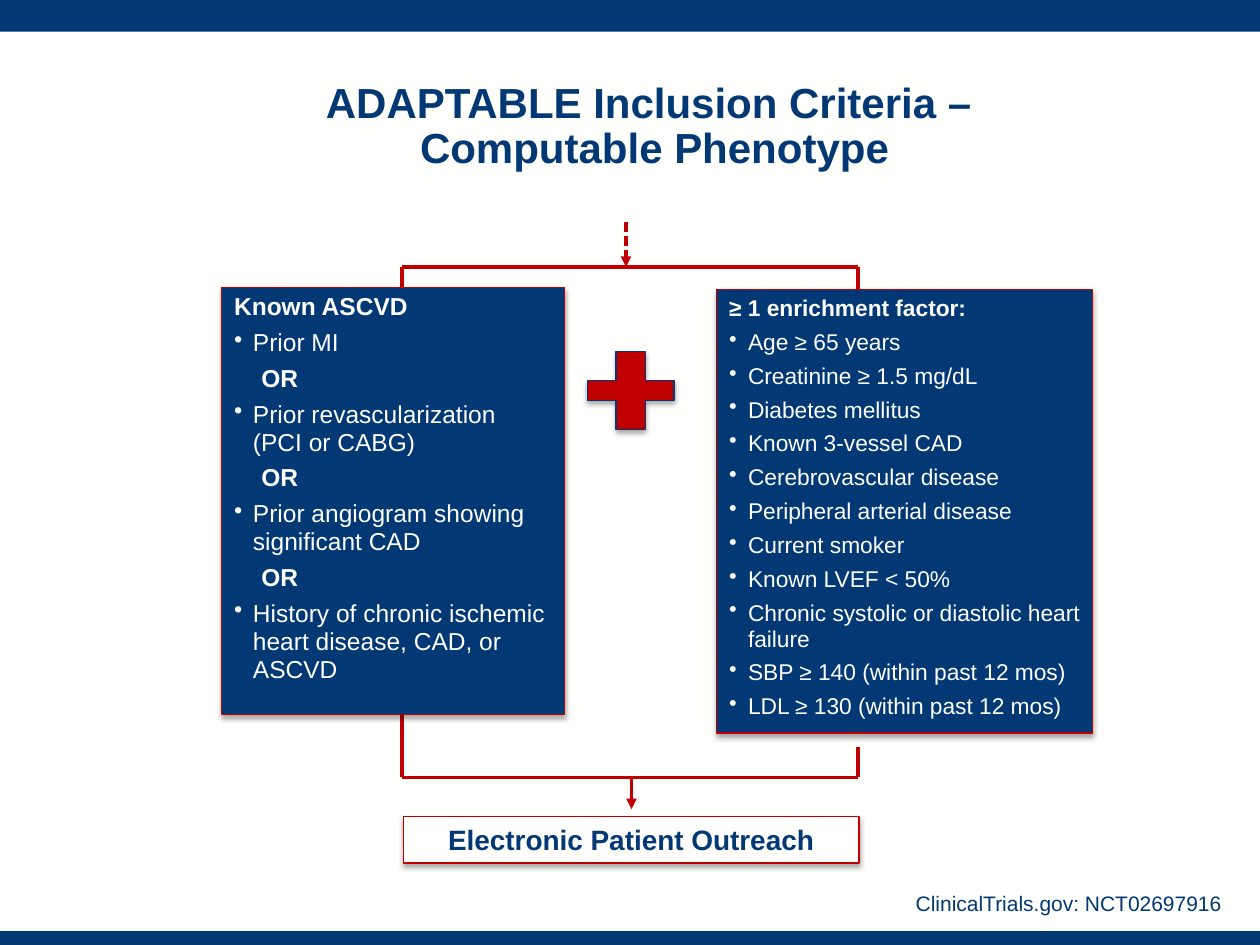
"""Build the ADAPTABLE inclusion criteria slide."""
from lxml import etree
from pptx import Presentation
from pptx import util as u
from pptx.dml.color import RGBColor
from pptx.enum import dml, shapes, text
from pptx.oxml.ns import qn

Cm, Pt = u.Cm, u.Pt
HUES = {"navy": "023873", "red": "C00000", "white": "FFFFFE", "black": "000000"}
RGB = {name: RGBColor.from_string(code) for name, code in HUES.items()}
KIND = shapes.MSO_SHAPE


def style(para, size, hue, bold=False):
    para.font.name, para.font.size = "Arial", Pt(size)
    para.font.bold, para.font.color.rgb = bold, RGB[hue]


def block(kind, left, top, width, height, fill, edge=None):
    shape = slide.shapes.add_shape(kind, Cm(left), Cm(top), Cm(width), Cm(height))
    shape.shadow.inherit = False
    shape.fill.solid()
    shape.fill.fore_color.rgb = RGB[fill]
    if edge is None:
        shape.line.fill.background()
        return shape
    shape.line.color.rgb, shape.line.width = RGB[edge], Pt(0.75)
    glow = etree.SubElement(shape._element.spPr.find(qn("a:effectLst")), qn("a:outerShdw"),
                            blurRad=str(Pt(3.1)), dist=str(Pt(1.8)), dir="5400000", rotWithShape="0")
    tint = etree.SubElement(glow, qn("a:srgbClr"), val=HUES["black"])
    etree.SubElement(tint, qn("a:alpha"), val="35000")
    return shape


deck = Presentation()
deck.slide_width, deck.slide_height = Cm(25.4), Cm(19.05)
slide = deck.slides.add_slide(deck.slide_layouts[5])
slide.background.fill.solid()
slide.background.fill.fore_color.rgb = RGB["white"]

for top, height in [(0, 0.64), (18.77, 0.32)]:
    block(KIND.RECTANGLE, 0, top, 25.4, height, "navy")

title = slide.shapes.title
title.left, title.top, title.width, title.height = Cm(5.23), Cm(2.11), Cm(15.93), Cm(1.37)
frame = title.text_frame
frame.margin_left = frame.margin_right = frame.margin_top = frame.margin_bottom = 0
frame.vertical_anchor = text.MSO_ANCHOR.BOTTOM
frame.auto_size, frame.word_wrap = text.MSO_AUTO_SIZE.NONE, True
head = frame.paragraphs[0]
head.text = "ADAPTABLE Inclusion Criteria – \vComputable Phenotype"
head.alignment, head.line_spacing = text.PP_ALIGN.CENTER, 0.9
style(head, 24, "navy", True)

west, east, upper, lower = 8.1, 17.3, 5.38, 15.67
lines = [
    (east, upper, west, upper, False, False),
    (east, upper, east, 6.05, False, False),
    (west, upper, west, 6.05, False, False),
    (east, lower, west, lower, False, False),
    (west, lower, west, 11.94, False, False),
    (east, 15.06, east, lower, False, False),
    (12.62, 4.47, 12.62, upper, True, True),
    (12.73, lower, 12.73, 16.31, True, False),
]
for x1, y1, x2, y2, arrow, dashed in lines:
    link = slide.shapes.add_connector(shapes.MSO_CONNECTOR.STRAIGHT, Cm(x1), Cm(y1), Cm(x2), Cm(y2))
    link.line.color.rgb, link.line.width = RGB["red"], Pt(2)
    if dashed:
        link.line.dash_style = dml.MSO_LINE.SQUARE_DOT
    if arrow:
        etree.SubElement(link.line._get_or_add_ln(), qn("a:tailEnd"), type="triangle")
    etree.SubElement(link._element.spPr, qn("a:effectLst"))

goal = block(KIND.RECTANGLE, 8.13, 16.46, 9.19, 0.94, "white", "red")
goal.text_frame.vertical_anchor = text.MSO_ANCHOR.MIDDLE
para = goal.text_frame.paragraphs[0]
para.text, para.alignment = "Electronic Patient Outreach", text.PP_ALIGN.CENTER
style(para, 16, "navy", True)

panels = [
    ((14.45, 5.84, 7.57, 8.94), 13, "≥ 1 enrichment factor:", [
        "Age ≥ 65 years", "Creatinine ≥ 1.5 mg/dL", "Diabetes mellitus",
        "Known 3-vessel CAD", "Cerebrovascular disease",
        "Peripheral arterial disease", "Current smoker", "Known LVEF < 50%",
        "Chronic systolic or diastolic heart failure",
        "SBP ≥ 140 (within past 12 mos)", "LDL ≥ 130 (within past 12 mos)"]),
    ((4.47, 5.79, 6.91, 8.61), 14, "Known ASCVD", [
        "Prior MI", "OR", "Prior revascularization\v(PCI or CABG)", "OR",
        "Prior angiogram showing significant CAD", "OR",
        "History of chronic ischemic heart disease, CAD, or ASCVD"]),
]
for place, size, label, items in panels:
    frame = block(KIND.RECTANGLE, *place, "navy", "red").text_frame
    frame.word_wrap, frame.vertical_anchor = True, text.MSO_ANCHOR.TOP
    para = frame.paragraphs[0]
    para.text, para.alignment, para.line_spacing = label, text.PP_ALIGN.LEFT, 0.95
    style(para, size, "white", True)
    for item in items:
        para = frame.add_paragraph()
        para.text, para.alignment = item, text.PP_ALIGN.LEFT
        para.line_spacing, para.space_before = 0.95, Pt(4.5)
        props = para._p.get_or_add_pPr()
        if item == "OR":
            props.set("marL", str(Cm(0.55)))
        else:
            props.set("marL", str(Cm(0.38)))
            props.set("indent", str(Cm(-0.38)))
            etree.SubElement(props, qn("a:buChar"), char="•")
        style(para, size, "white", item == "OR")

plus = block(KIND.CROSS, 11.84, 7.09, 1.75, 1.57, "red", "navy")
plus.adjustments[0] = 0.37

note = slide.shapes.add_textbox(Cm(18.21), Cm(17.83), Cm(7.57), Cm(1.27))
note.text_frame.word_wrap = True
para = note.text_frame.paragraphs[0]
para.text = "ClinicalTrials.gov: NCT02697916"
style(para, 12, "navy")

deck.save("out.pptx")
